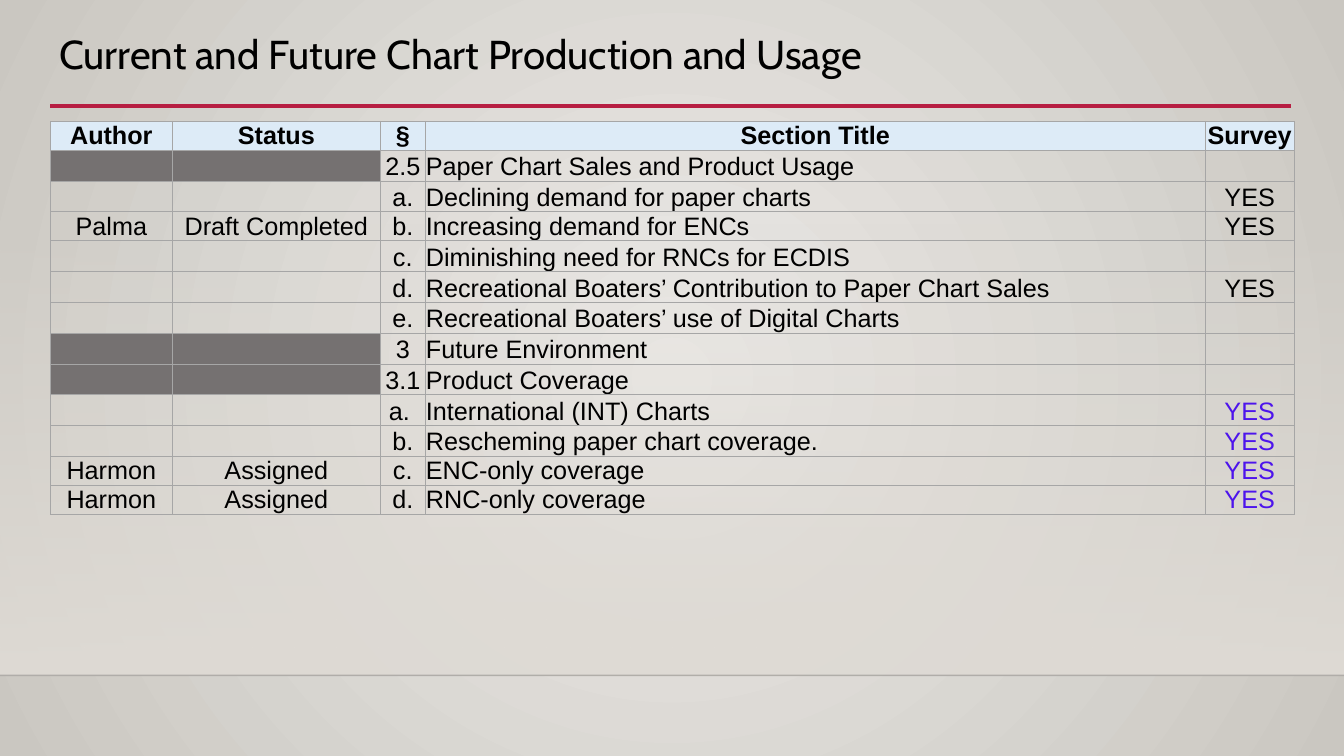
from lxml import etree
from pptx import Presentation
from pptx.dml.color import RGBColor
from pptx.enum import shapes, text
from pptx.oxml import ns
from pptx.util import Pt

COLORS = {
    "black": "000000", "rule": "B71E42", "floor": "000001", "band": "DFDBD5",
    "center": "ECEAE7", "edge": "CAC7C1", "head": "DDEBF7", "gray": "757171",
    "border": "A6A6A6", "violet": "4D14EC",
}
COLUMNS = [87.1, 148.6, 32.1, 557.1, 63.6]
HEADINGS = ["Author", "Status", "§", "Section Title", "Survey"]
TOPICS = [
    ("", "", "2.5", "Paper Chart Sales and Product Usage", ""),
    ("", "", "a.", "Declining demand for paper charts", "YES"),
    ("Palma", "Draft Completed", "b.", "Increasing demand for ENCs", "YES"),
    ("", "", "c.", "Diminishing need for RNCs for ECDIS", ""),
    ("", "", "d.", "Recreational Boaters’ Contribution to Paper Chart Sales", "YES"),
    ("", "", "e.", "Recreational Boaters’ use of Digital Charts", ""),
    ("", "", "3", "Future Environment", ""),
    ("", "", "3.1", "Product Coverage", ""),
    ("", "", "a. ", "International (INT) Charts", "YES"),
    ("", "", "b.", "Rescheming paper chart coverage.", "YES"),
    ("Harmon", "Assigned", "c.", "ENC-only coverage", "YES"),
    ("Harmon", "Assigned", "d.", "RNC-only coverage", "YES"),
]
GROUP_ROWS = {1, 7, 8}
FIRST_FUTURE_ROW = 7


def rgb(name):
    """Return the named colour."""
    return RGBColor.from_string(COLORS[name])


def add(parent, tag, **attrs):
    """Append a DrawingML element and return it."""
    return etree.SubElement(parent, ns.qn(tag), attrs)


def write(tf, words, size=18, font="Arial", color="black", bold=False,
          align=text.PP_ALIGN.LEFT):
    """Write one formatted paragraph into a text frame."""
    p = tf.paragraphs[0]
    p.alignment = align
    r = p.add_run()
    r.text = words
    r.font.size, r.font.name, r.font.bold = Pt(size), font, bold
    r.font.color.rgb = rgb(color)
    return p


def add_line(s, x, y, width, color, weight, alpha=100):
    """Draw a horizontal line with a given opacity."""
    line = s.shapes.add_connector(
        shapes.MSO_CONNECTOR.STRAIGHT, Pt(x), Pt(y), Pt(x + width), Pt(y))
    line.line.width = Pt(weight)
    line.line.color.rgb = rgb(color)
    add(line._element.spPr, "a:effectLst")
    if alpha < 100:
        clr = line._element.spPr.find(".//" + ns.qn("a:srgbClr"))
        add(clr, "a:alpha", val=str(alpha * 1000))


def set_gradient(fill, first, last):
    """Give a fill a two-colour gradient running downwards."""
    fill.gradient()
    fill.gradient_angle = 270
    for stop, name, place in zip(fill.gradient_stops, (first, last), (0, 1)):
        stop.color.rgb = rgb(name)
        stop.position = place


def add_backdrop(s, x, y, width, height):
    """Paint the radial background, the fading band and its floor line."""
    set_gradient(s.background.fill, "center", "edge")
    grad = s._element.find(".//" + ns.qn("a:gradFill"))
    grad.remove(grad.find(ns.qn("a:lin")))
    radial = add(grad, "a:path", path="circle")
    add(radial, "a:fillToRect", l="50000", t="50000", r="50000", b="50000")
    band = s.shapes.add_shape(
        shapes.MSO_SHAPE.RECTANGLE, Pt(x), Pt(y), Pt(width), Pt(height))
    band.shadow.inherit = False
    band.line.fill.background()
    set_gradient(band.fill, "band", "band")
    add(band._element.spPr.find(".//" + ns.qn("a:srgbClr")), "a:alpha", val="0")
    add_line(s, x, y + height, width, "floor", 1, alpha=20)


def add_title(s, x, y, width, height):
    """Place the title and the red rule beneath it."""
    sp = s.shapes.title
    sp.left, sp.top, sp.width, sp.height = Pt(x), Pt(y), Pt(width), Pt(height)
    tf = sp.text_frame
    tf.word_wrap = True
    tf.auto_size = text.MSO_AUTO_SIZE.NONE
    tf.vertical_anchor = text.MSO_ANCHOR.MIDDLE
    p = write(tf, "Current and Future Chart Production and Usage", 28.8, "Cabin")
    p.line_spacing = 0.9
    add_line(s, x + 0.7, y + 55.4, 886.3, "rule", 2.5)


def style_cell(cell, fill=None):
    """Set a cell's margins, borders and fill."""
    cell.margin_left = cell.margin_right = Pt(0.5)
    cell.margin_top = cell.margin_bottom = 0
    for side in ("a:lnL", "a:lnR", "a:lnT", "a:lnB"):
        ln = add(cell._tc.get_or_add_tcPr(), side, w=str(Pt(0.5)))
        add(add(ln, "a:solidFill"), "a:srgbClr", val=COLORS["border"])
    if fill:
        cell.fill.solid()
        cell.fill.fore_color.rgb = rgb(fill)
    else:
        cell.fill.background()


def add_topics(s, x, y, row_height):
    """Build the table of sections, authors and survey marks."""
    rows = [HEADINGS, *TOPICS]
    table = s.shapes.add_table(
        len(rows), len(COLUMNS), Pt(x), Pt(y),
        Pt(sum(COLUMNS)), Pt(row_height * len(rows))).table
    table.horz_banding = table.first_row = False
    for column, width in zip(table.columns, COLUMNS):
        column.width = Pt(width)
    for i, row in enumerate(rows):
        table.rows[i].height = Pt(row_height)
        for j, words in enumerate(row):
            cell = table.cell(i, j)
            gray = "gray" if i in GROUP_ROWS and j < 2 else None
            style_cell(cell, "head" if i == 0 else gray)
            middle = i == 0 or j == 0 or words == "Assigned"
            cell.vertical_anchor = (
                text.MSO_ANCHOR.MIDDLE if middle else text.MSO_ANCHOR.BOTTOM)
            if words:
                left = i > 0 and j == 3
                violet = j == 4 and i > FIRST_FUTURE_ROW
                write(cell.text_frame, words, bold=i == 0,
                      color="violet" if violet else "black",
                      align=text.PP_ALIGN.LEFT if left else text.PP_ALIGN.CENTER)


def main():
    """Build and save the slide."""
    prs = Presentation()
    prs.slide_width, prs.slide_height = Pt(960), Pt(540)
    s = prs.slides.add_slide(prs.slide_layouts[5])
    add_backdrop(s, 0, 159, 960, 323.4)
    add_title(s, 35.3, 20.2, 756, 40.3)
    add_topics(s, 36, 86.6, 20.7)
    prs.save("out.pptx")


if __name__ == "__main__":
    main()
